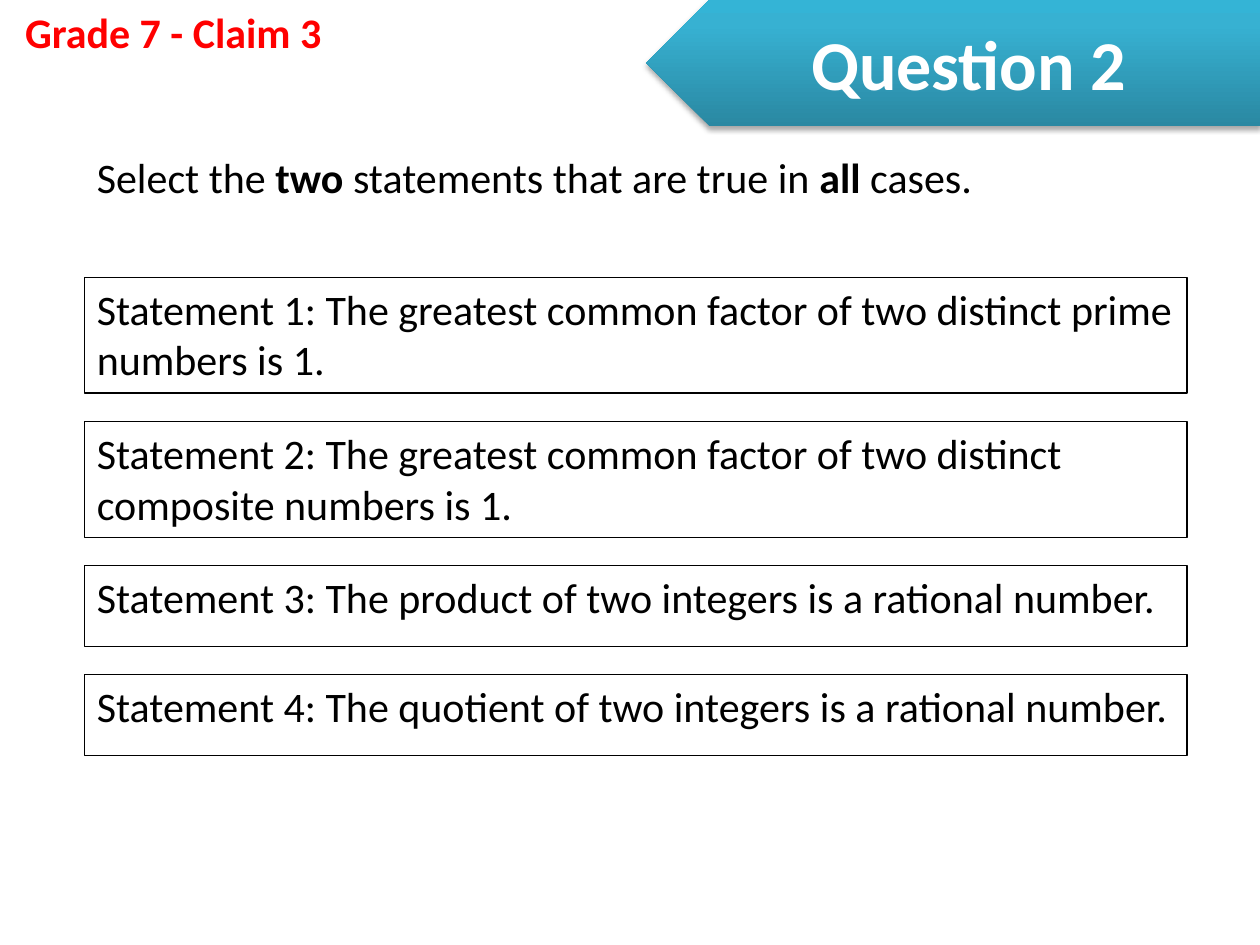
from copy import deepcopy

from lxml.etree import SubElement
from pptx import Presentation
from pptx.dml.color import RGBColor
from pptx.enum.shapes import MSO_SHAPE as Shape
from pptx.enum.text import MSO_ANCHOR as Anchor, MSO_AUTO_SIZE as AutoSize, PP_ALIGN as Align
from pptx.oxml.ns import qn
from pptx.util import Inches, Pt

BLACK = RGBColor(0x00, 0x00, 0x00)
WHITE = RGBColor(0xFF, 0xFF, 0xFF)
RED = RGBColor(0xFF, 0x00, 0x00)
BANNER_STOPS = [
    (0, RGBColor(0x2A, 0x88, 0xA2)),
    (0.8, RGBColor(0x37, 0xB1, 0xD2)),
    (1, RGBColor(0x34, 0xB4, 0xD6)),
]

BODY = {"name": "Calibri", "size": Pt(24), "bold": False}
HEADING = {**BODY, "bold": True}
BANNER = {**HEADING, "size": Pt(40)}
BODY_PARAGRAPH = {"alignment": Align.LEFT, "space_before": Pt(4.8)}
CENTERED = {"alignment": Align.CENTER}

LEFT, STATEMENT_WIDTH, FIRST_TOP, GAP = 0.67, 8.75, 2.2, 0.225
STATEMENTS = [
    ("The greatest common factor of two distinct prime numbers is 1.", 0.92),
    ("The greatest common factor of two distinct composite numbers is 1.", 0.92),
    ("The product of two integers is a rational number.", 0.64),
    ("The quotient of two integers is a rational number.", 0.64),
]


def apply(target, values):
    for key, value in values.items():
        setattr(target, key, value)


def write(holder, pieces, color, paragraph_format, anchor=Anchor.TOP):
    frame = holder.text_frame
    apply(frame, {"word_wrap": True, "vertical_anchor": anchor})
    paragraph = frame.paragraphs[0]
    apply(paragraph, paragraph_format)
    for text, font_format in pieces:
        run = paragraph.add_run()
        run.text = text
        apply(run.font, font_format)
        run.font.color.rgb = color


def add_text(slide, box, pieces, color, paragraph_format):
    label = slide.shapes.add_textbox(*map(Inches, box))
    write(label, pieces, color, paragraph_format)
    return label


def add_statement(slide, top, height, text):
    statement = slide.shapes.add_shape(
        Shape.RECTANGLE, *map(Inches, (LEFT, top, STATEMENT_WIDTH, height)))
    statement.shadow.inherit = False
    statement.fill.background()
    statement.line.color.rgb = BLACK
    statement.line.width = Pt(0.75)
    write(statement, [(text, BODY)], BLACK, BODY_PARAGRAPH)


def fill_gradient(banner):
    banner.fill.gradient()
    banner.fill.gradient_angle = 90
    stop_list = banner.element.spPr.find(qn("a:gradFill")).find(qn("a:gsLst"))
    stop_list.append(deepcopy(stop_list[-1]))
    for stop, (position, color) in zip(banner.fill.gradient_stops, BANNER_STOPS):
        stop.position = position
        stop.color.rgb = color


def add_shadow(banner):
    banner.shadow.inherit = False
    effects = banner.element.spPr.find(qn("a:effectLst"))
    shadow = SubElement(effects, qn("a:outerShdw"), blurRad=str(Pt(3.1)),
                        dist=str(Pt(1.8)), dir="5400000", rotWithShape="0")
    shade = SubElement(shadow, qn("a:srgbClr"), val=str(BLACK))
    SubElement(shade, qn("a:alpha"), val="35000")


def add_banner(slide, text):
    banner = slide.shapes.add_shape(
        Shape.PENTAGON, *map(Inches, (5.13, 0, 4.87, 1)))
    banner.element.spPr.find(qn("a:xfrm")).set("flipH", "1")
    banner.line.fill.background()
    fill_gradient(banner)
    add_shadow(banner)
    write(banner, [(text, BANNER)], WHITE, CENTERED, Anchor.MIDDLE)


def main():
    deck = Presentation()
    deck.slide_width, deck.slide_height = Inches(10), Inches(7.5)
    slide = deck.slides.add_slide(deck.slide_layouts[6])

    grade = add_text(slide, (0, 0, 2.75, 0.5),
                     [("Grade 7 - Claim 3", HEADING)], RED, CENTERED)
    grade.text_frame.auto_size = AutoSize.SHAPE_TO_FIT_TEXT

    prompt = [
        ("Select the ", BODY),
        ("two", HEADING),
        (" statements that are true in ", BODY),
        ("all", HEADING),
        (" cases.", BODY),
    ]
    add_text(slide, (LEFT, 1.15, 7.42, 0.48), prompt, BLACK, BODY_PARAGRAPH)

    top = FIRST_TOP
    for number, (claim, height) in enumerate(STATEMENTS, start=1):
        add_statement(slide, top, height, f"Statement {number}: {claim}")
        top += height + GAP

    add_banner(slide, "Question 2")
    deck.save("out.pptx")


if __name__ == "__main__":
    main()
